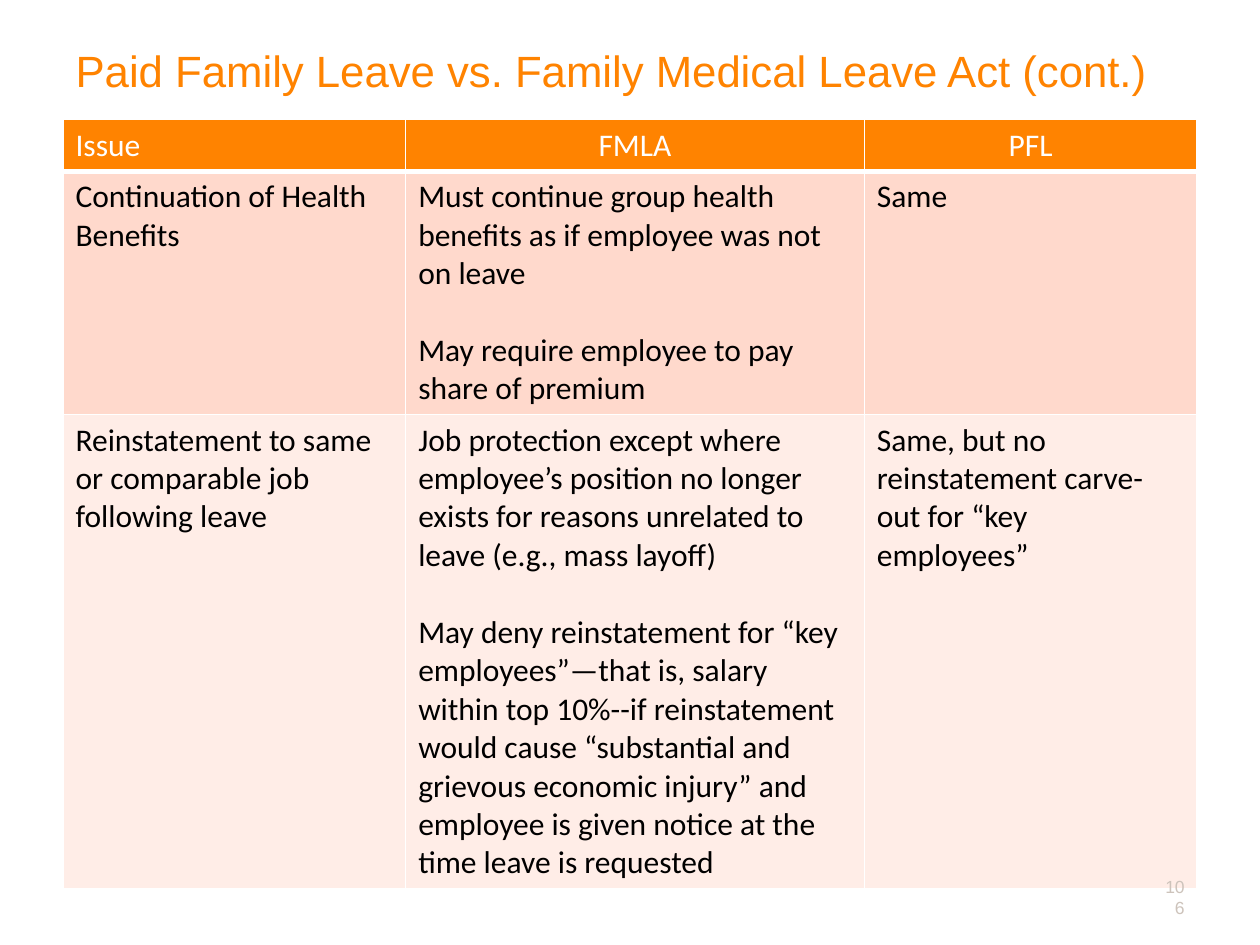
from dataclasses import dataclass

import lxml.etree
import pptx
import pptx.dml.color
import pptx.enum.text
import pptx.oxml.ns
import pptx.util

Inches = pptx.util.Inches
Pt = pptx.util.Pt
RGBColor = pptx.dml.color.RGBColor
Align = pptx.enum.text.PP_ALIGN
Anchor = pptx.enum.text.MSO_ANCHOR

ORANGE = RGBColor(0xFF, 0x83, 0x00)
PEACH = RGBColor(0xFF, 0xD9, 0xCC)
PALE_PEACH = RGBColor(0xFF, 0xED, 0xE7)
WHITE = RGBColor(0xFF, 0xFF, 0xFF)
BLACK = RGBColor(0x00, 0x00, 0x00)
TAUPE = RGBColor(0xCD, 0xC3, 0xBB)

TITLE_FONT = {"name": "Arial", "size": Pt(25)}
CELL_FONT = {"name": "Calibri", "size": Pt(18), "bold": False}
NUMBER_FONT = {"name": "Arial", "size": Pt(10)}


@dataclass
class TableRow:
    """One table row; each cell is a list of paragraphs."""
    height: float
    fill: RGBColor
    color: RGBColor
    cells: list[list[str]]
    bottom_border: int = 1
    aligns: tuple = (Align.LEFT,) * 3


COLUMN_WIDTHS = (2.72, 3.64, 2.64)
ROWS = [
    TableRow(0.41, ORANGE, WHITE, [["Issue"], ["FMLA"], ["PFL"]],
             bottom_border=3, aligns=(Align.LEFT, Align.CENTER, Align.CENTER)),
    TableRow(1.93, PEACH, BLACK, [
        ["Continuation of Health Benefits"],
        ["Must continue group health benefits as if employee was not on leave",
         "May require employee to pay share of premium"],
        ["Same"],
    ]),
    TableRow(3.76, PALE_PEACH, BLACK, [
        ["Reinstatement to same or comparable job following leave"],
        ["Job protection except where employee’s position no longer exists "
         "for reasons unrelated to leave (e.g., mass layoff)",
         "May deny reinstatement for “key employees”—that is, salary within "
         "top 10%--if reinstatement would cause “substantial and grievous "
         "economic injury” and employee is given notice at the time leave "
         "is requested"],
        ["Same, but no reinstatement carve-out for “key employees”"],
    ]),
]


def write(frame, texts: list[str], font: dict, color: RGBColor, align) -> None:
    """Fill a text frame, with one line of space between paragraphs."""
    for index, text in enumerate(texts):
        para = frame.paragraphs[0] if index == 0 else frame.add_paragraph()
        para.alignment = align
        if index:
            para.space_before = Pt(22)
        span = para.add_run()
        span.text = text
        for name, value in font.items():
            setattr(span.font, name, value)
        span.font.color.rgb = color


def add_borders(cell, bottom: int) -> None:
    """Give a cell white lines; they come before the fill in the XML."""
    properties = cell._tc.get_or_add_tcPr()
    qn = pptx.oxml.ns.qn
    widths = {"lnL": 1, "lnR": 1, "lnT": 1, "lnB": bottom}
    for position, (side, width) in enumerate(widths.items()):
        line = lxml.etree.Element(qn(f"a:{side}"), w=str(Pt(width)))
        fill = lxml.etree.SubElement(line, qn("a:solidFill"))
        lxml.etree.SubElement(fill, qn("a:srgbClr"), val=str(WHITE))
        properties.insert(position, line)


def add_comparison(page) -> None:
    height = sum(row.height for row in ROWS)
    table = page.shapes.add_table(
        len(ROWS), len(COLUMN_WIDTHS), Inches(0.5), Inches(0.95),
        Inches(sum(COLUMN_WIDTHS)), Inches(height)).table
    for column, width in zip(table.columns, COLUMN_WIDTHS):
        column.width = Inches(width)
    for table_row, row in zip(table.rows, ROWS):
        table_row.height = Inches(row.height)
        for cell, texts, align in zip(table_row.cells, row.cells, row.aligns):
            cell.fill.solid()
            cell.fill.fore_color.rgb = row.fill
            add_borders(cell, row.bottom_border)
            write(cell.text_frame, texts, CELL_FONT, row.color, align)


def main() -> None:
    deck = pptx.Presentation()
    deck.slide_width, deck.slide_height = Inches(10), Inches(7.5)
    page = deck.slides.add_slide(deck.slide_layouts[5])

    # Title
    title = page.shapes.title
    title.left, title.top = Inches(0.5), Inches(0.3)
    title.width, title.height = Inches(9), Inches(1.25)
    title.text_frame.vertical_anchor = Anchor.TOP
    title.text_frame.auto_size = pptx.enum.text.MSO_AUTO_SIZE.NONE
    write(title.text_frame,
          ["Paid Family Leave vs. Family Medical Leave Act (cont.)"],
          TITLE_FONT, ORANGE, Align.LEFT)

    # Comparison table
    add_comparison(page)

    # Page number
    box = page.shapes.add_textbox(
        Inches(9.08), Inches(6.92), Inches(0.42), Inches(0.4))
    box.text_frame.word_wrap = True
    box.text_frame.vertical_anchor = Anchor.MIDDLE
    write(box.text_frame, ["106"], NUMBER_FONT, TAUPE, Align.RIGHT)

    deck.save("out.pptx")


if __name__ == "__main__":
    main()
